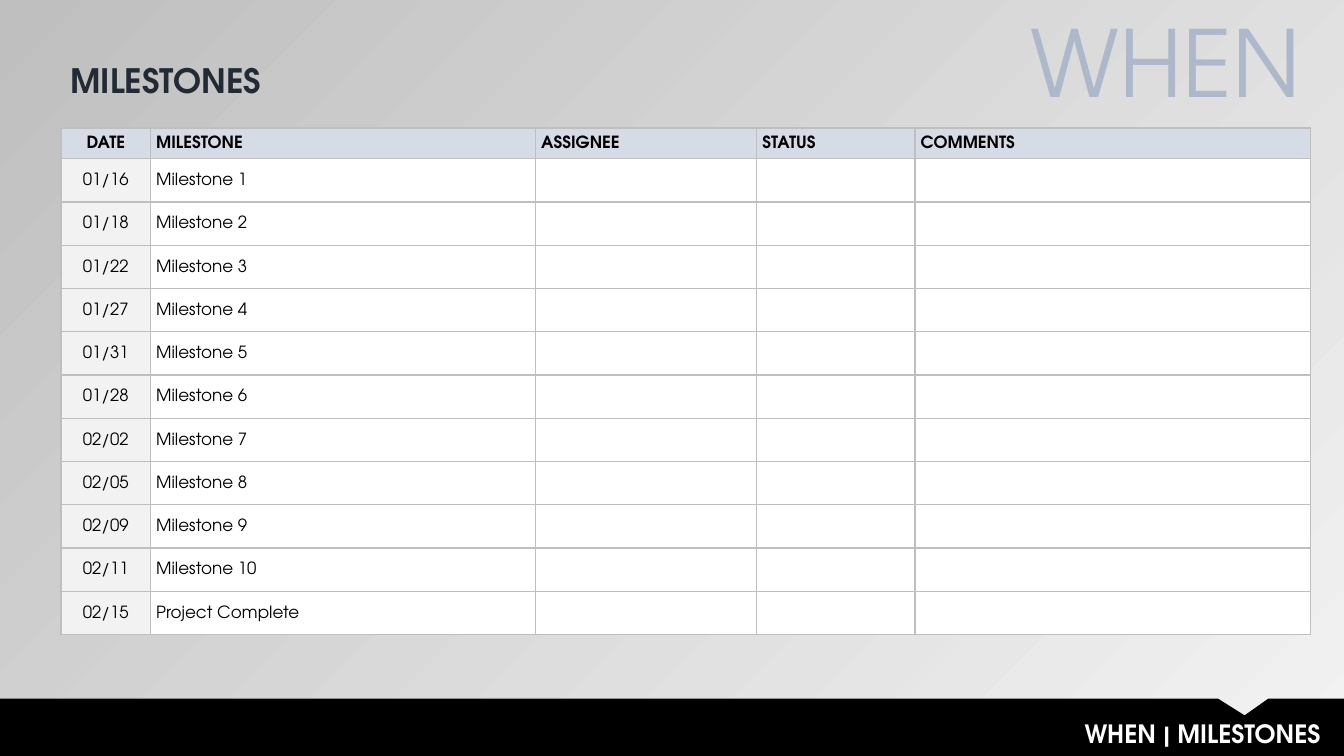
from dataclasses import dataclass

from lxml import etree
from pptx import Presentation
from pptx import util as u
from pptx.dml.color import RGBColor
from pptx.enum import text
from pptx.oxml import ns

FONT = "TeX Gyre Adventor"
COLORS = {
    "light": "F2F2F2",
    "gray": "BFBFBF",
    "black": "000000",
    "white": "FFFFFF",
    "header": "D6DCE5",
    "pale_blue": "ADB9CA",
    "navy": "222A35",
}
LEFT, CENTER, RIGHT = text.PP_ALIGN.LEFT, text.PP_ALIGN.CENTER, text.PP_ALIGN.RIGHT


@dataclass
class Label:
    words: str
    left: float
    top: float
    width: float
    height: float
    size: float
    color: str
    bold: bool = True
    align: text.PP_ALIGN = LEFT


@dataclass
class Column:
    title: str
    width: float
    align: text.PP_ALIGN = LEFT
    fill: str = "white"


LABELS = [
    Label("WHEN | MILESTONES", 298, 509.8, 652.4, 29, 18, "white", align=RIGHT),
    Label("WHEN", 654.5, 0, 281.5, 87, 66, "pale_blue", bold=False, align=RIGHT),
    Label("MILESTONES", 43.2, 39.6, 641, 36, 24, "navy"),
]
COLUMNS = [
    Column("DATE", 64, CENTER, "light"),
    Column("MILESTONE", 275),
    Column("ASSIGNEE", 158),
    Column("STATUS", 113),
    Column("COMMENTS", 282.5),
]
DATES = ["01/16", "01/18", "01/22", "01/27", "01/31", "01/28",
         "02/02", "02/05", "02/09", "02/11", "02/15"]
TABLE_LEFT, TABLE_TOP = 43.6, 91.4
HEADER_HEIGHT, ROW_HEIGHT = 22, 30.9
BAR_OUTLINE = [(0, 499), (870.5, 499), (889, 511.2), (906.5, 499),
               (960, 499), (960, 540), (0, 540)]


def rgb(name: str) -> RGBColor:
    return RGBColor.from_string(COLORS[name])


def write(tf, words: str, *, size: float, color: str, bold: bool = False,
          align: text.PP_ALIGN = LEFT, spacing: float = 1.0) -> None:
    p = tf.paragraphs[0]
    p.alignment = align
    p.line_spacing = spacing
    r = p.add_run()
    r.text = words
    r.font.name = FONT
    r.font.size = u.Pt(size)
    r.font.bold = bold
    r.font.color.rgb = rgb(color)


def paint_background(s) -> None:
    fill = s.background.fill
    fill.gradient()
    fill.gradient_angle = 135
    for stop, name in zip(fill.gradient_stops, ("light", "gray")):
        stop.color.rgb = rgb(name)
    first = next(s.element.iter(ns.qn("a:srgbClr")))
    etree.SubElement(first, ns.qn("a:alpha"), val="40000")


def draw_bar(s) -> None:
    builder = s.shapes.build_freeform(*BAR_OUTLINE[0], scale=u.Pt(1))
    builder.add_line_segments(BAR_OUTLINE[1:], close=True)
    sp = builder.convert_to_shape()
    sp.shadow.inherit = False
    sp.fill.solid()
    sp.fill.fore_color.rgb = rgb("black")
    sp.line.fill.background()


def draw_label(s, label: Label) -> None:
    sp = s.shapes.add_textbox(u.Pt(label.left), u.Pt(label.top),
                              u.Pt(label.width), u.Pt(label.height))
    tf = sp.text_frame
    tf.word_wrap = True
    tf.auto_size = text.MSO_AUTO_SIZE.SHAPE_TO_FIT_TEXT
    write(tf, label.words, size=label.size, color=label.color,
          bold=label.bold, align=label.align)


def style_cell(cell, fill: str) -> None:
    cell.margin_left = cell.margin_right = u.Pt(4)
    cell.margin_top = cell.margin_bottom = 0
    cell.vertical_anchor = text.MSO_ANCHOR.MIDDLE
    props = cell._tc.get_or_add_tcPr()
    for side in ("lnL", "lnR", "lnT", "lnB"):
        ln = etree.SubElement(props, ns.qn(f"a:{side}"), w=str(u.Pt(1)))
        solid = etree.SubElement(ln, ns.qn("a:solidFill"))
        etree.SubElement(solid, ns.qn("a:srgbClr"), val=COLORS["gray"])
    cell.fill.solid()
    cell.fill.fore_color.rgb = rgb(fill)


def draw_table(s) -> None:
    names = [f"Milestone {i}" for i in range(1, len(DATES))] + ["Project Complete"]
    rows = [[c.title for c in COLUMNS]]
    rows += [[date, name, "", "", ""] for date, name in zip(DATES, names)]
    heights = [HEADER_HEIGHT] + [ROW_HEIGHT] * len(DATES)
    frame = s.shapes.add_table(
        len(rows), len(COLUMNS), u.Pt(TABLE_LEFT), u.Pt(TABLE_TOP),
        u.Pt(sum(c.width for c in COLUMNS)), u.Pt(sum(heights)))
    table = frame.table
    table.first_row = table.horz_banding = False
    for col, column in zip(table.columns, COLUMNS):
        col.width = u.Pt(column.width)
    for i, (values, height) in enumerate(zip(rows, heights)):
        table.rows[i].height = u.Pt(height)
        for j, (value, column) in enumerate(zip(values, COLUMNS)):
            cell = table.cell(i, j)
            style_cell(cell, column.fill if i else "header")
            if value:
                write(cell.text_frame, value, size=12, color="black",
                      bold=i == 0, align=column.align, spacing=1.07)


def main() -> None:
    prs = Presentation()
    prs.slide_width, prs.slide_height = u.Pt(960), u.Pt(540)
    s = prs.slides.add_slide(prs.slide_layouts[6])

    # Background and footer bar
    paint_background(s)
    draw_bar(s)

    # Headings
    for label in LABELS:
        draw_label(s, label)

    # Milestone schedule
    draw_table(s)

    prs.save("out.pptx")


if __name__ == "__main__":
    main()
